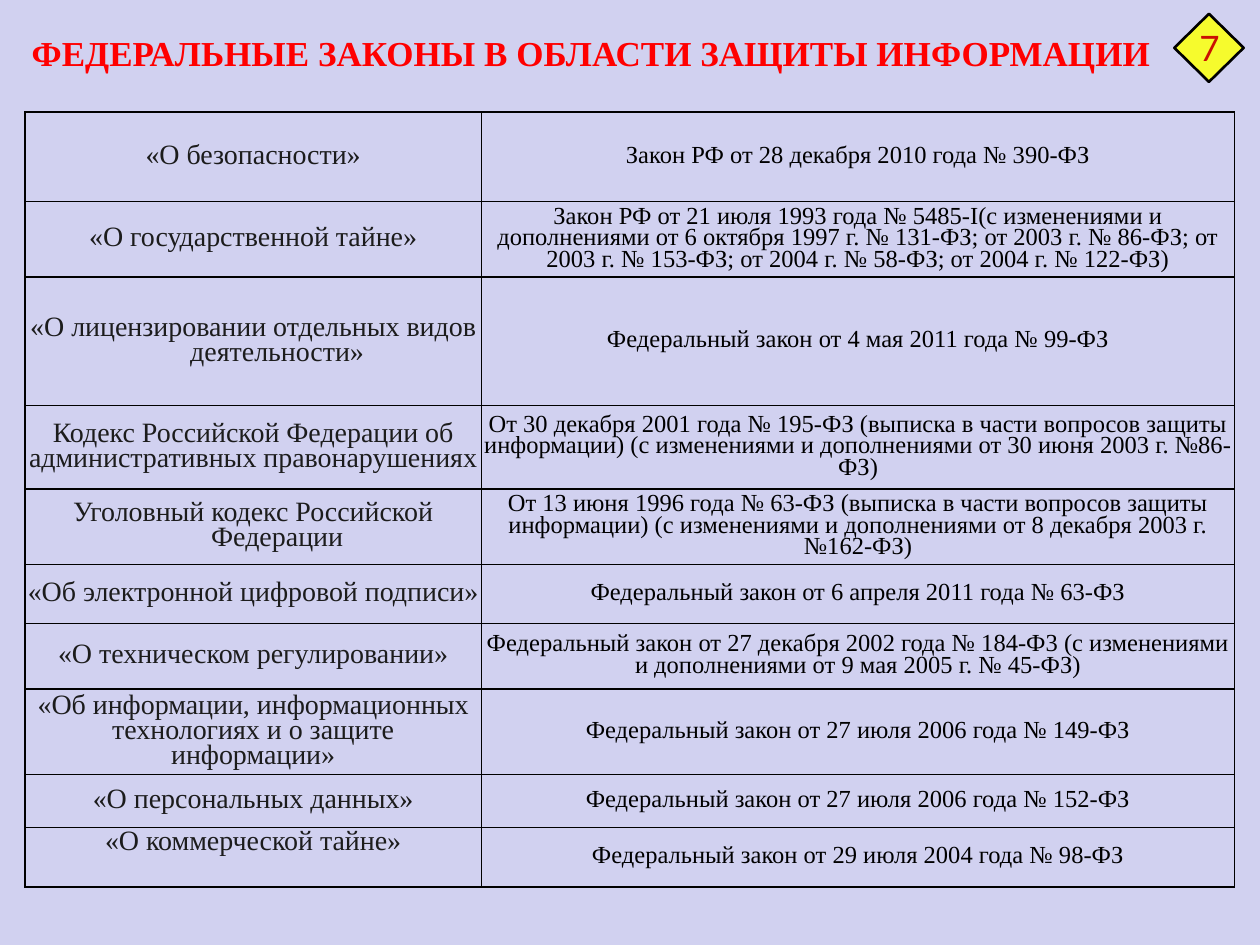
"""Build a slide that lists the federal laws on information protection."""
import dataclasses
import typing

import pptx
import pptx.dml.color
import pptx.enum.shapes
import pptx.enum.text
import pptx.oxml
import pptx.oxml.ns
import pptx.util

Inches = pptx.util.Inches
Pt = pptx.util.Pt
RGBColor = pptx.dml.color.RGBColor
ANCHOR = pptx.enum.text.MSO_ANCHOR
ALIGN = pptx.enum.text.PP_ALIGN

LAVENDER = RGBColor(0xD1, 0xD1, 0xF0)
RED = RGBColor(0xFF, 0x00, 0x00)
DARK_RED = RGBColor(0xCA, 0x10, 0x02)
YELLOW = RGBColor(0xF6, 0xFB, 0x2D)
CHARCOAL = RGBColor(0x1C, 0x1C, 0x1C)
BLACK = RGBColor(0x00, 0x00, 0x00)

SERIF = "Times New Roman"
COLUMN_WIDTHS = (3.62, 5.98)
HANGING = 0.38
CELL_MARGIN = Inches(0.02)
CELL_FORMAT = {
    "margin_left": CELL_MARGIN,
    "margin_right": CELL_MARGIN,
    "margin_top": CELL_MARGIN,
    "margin_bottom": CELL_MARGIN,
}


@dataclasses.dataclass(frozen=True)
class Law:
    """One table row: the law's name and its details."""

    height: float
    name: str
    details: str
    name_hangs: bool = True
    details_hang: bool = False
    name_anchor: typing.Any = ANCHOR.MIDDLE


LAWS = (
    Law(0.71, "«О безопасности»", "Закон РФ от 28 декабря 2010 года № 390-ФЗ"),
    Law(
        0.6,
        "«О государственной тайне»",
        "Закон РФ от 21 июля 1993 года № 5485-I(с изменениями и дополнениями "
        "от 6 октября 1997 г. № 131-ФЗ; от 2003 г. № 86-ФЗ; от 2003 г. "
        "№ 153-ФЗ; от 2004 г. № 58-ФЗ; от 2004 г. № 122-ФЗ)",
    ),
    Law(
        1.02,
        "«О лицензировании отдельных видов деятельности»",
        "Федеральный закон от 4 мая 2011 года № 99-ФЗ",
        details_hang=True,
    ),
    Law(
        0.66,
        "Кодекс Российской Федерации об административных правонарушениях",
        "От 30 декабря 2001 года № 195-ФЗ (выписка в части вопросов защиты "
        "информации) (с изменениями и дополнениями от 30 июня 2003 г. №86-ФЗ)",
        name_hangs=False,
    ),
    Law(
        0.6,
        "Уголовный кодекс Российской Федерации",
        "От 13 июня 1996 года № 63-ФЗ (выписка в части вопросов защиты "
        "информации) (с изменениями и дополнениями от 8 декабря 2003 г. №162-ФЗ)",
    ),
    Law(
        0.47,
        "«Об электронной цифровой подписи»",
        "Федеральный закон от 6 апреля 2011 года № 63-ФЗ",
        details_hang=True,
    ),
    Law(
        0.52,
        "«О техническом регулировании»",
        "Федеральный закон от 27 декабря 2002 года № 184-Ф3 (с изменениями "
        "и дополнениями от 9 мая 2005 г. № 45-ФЗ)",
    ),
    Law(
        0.68,
        "«Об информации, информационных технологиях и о защите информации»",
        "Федеральный закон от 27 июля 2006 года № 149-ФЗ",
        name_hangs=False,
        details_hang=True,
    ),
    Law(
        0.42,
        "«О персональных данных»",
        "Федеральный закон от 27 июля 2006 года № 152-ФЗ",
        details_hang=True,
    ),
    Law(
        0.47,
        "«О коммерческой тайне»",
        "Федеральный закон от 29 июля 2004 года № 98-ФЗ",
        details_hang=True,
        name_anchor=ANCHOR.TOP,
    ),
)


def apply_format(target: typing.Any, values: dict[str, typing.Any]) -> None:
    """Set every attribute named in the format values."""
    for name, value in values.items():
        setattr(target, name, value)


def write_text(
    para: typing.Any, text: str, size: int, color: RGBColor, font: str = SERIF, bold: bool = False
) -> None:
    """Add one formatted run to a paragraph."""
    span = para.add_run()
    span.text = text
    apply_format(span.font, {"size": Pt(size), "name": font, "bold": bold})
    span.font.color.rgb = color


def add_borders(cell: typing.Any) -> None:
    """Give a cell a thin black line on each side."""
    properties = cell._tc.get_or_add_tcPr()
    for side in ("lnL", "lnR", "lnT", "lnB"):
        properties.append(
            pptx.oxml.parse_xml(
                f'<a:{side} {pptx.oxml.ns.nsdecls("a")} w="{Pt(1)}"><a:solidFill>'
                f'<a:srgbClr val="{BLACK}"/></a:solidFill></a:{side}>'
            )
        )


def fill_cell(
    cell: typing.Any, text: str, size: int, color: RGBColor, hangs: bool, anchor: typing.Any
) -> None:
    """Write and format one table cell."""
    add_borders(cell)
    cell.fill.background()
    apply_format(cell, CELL_FORMAT | {"vertical_anchor": anchor})
    para = cell.text_frame.paragraphs[0]
    apply_format(para, {"alignment": ALIGN.CENTER, "line_spacing": 0.8})
    if hangs:
        properties = para._p.get_or_add_pPr()
        properties.set("marL", str(Inches(HANGING)))
        properties.set("indent", str(-Inches(HANGING)))
    write_text(para, text, size, color)


def add_law_table(page: typing.Any) -> None:
    """Add the table of laws."""
    total_height = sum(law.height for law in LAWS)
    table = page.shapes.add_table(
        len(LAWS), len(COLUMN_WIDTHS), Inches(0.2), Inches(0.89),
        Inches(sum(COLUMN_WIDTHS)), Inches(total_height),
    ).table
    apply_format(table, {"first_row": False, "horz_banding": False})
    for column, width in zip(table.columns, COLUMN_WIDTHS):
        column.width = Inches(width)
    for row, law in zip(table.rows, LAWS):
        row.height = Inches(law.height)
        fill_cell(row.cells[0], law.name, 16, CHARCOAL, law.name_hangs, law.name_anchor)
        fill_cell(row.cells[1], law.details, 14, BLACK, law.details_hang, ANCHOR.MIDDLE)


def add_title(page: typing.Any, text: str) -> None:
    """Move and format the title placeholder."""
    title = page.shapes.title
    place = {"left": 0.08, "top": 0.16, "width": 9.22, "height": 0.47}
    apply_format(title, {name: Inches(value) for name, value in place.items()})
    apply_format(title.text_frame, {"vertical_anchor": ANCHOR.BOTTOM, "word_wrap": True})
    para = title.text_frame.paragraphs[0]
    para.alignment = ALIGN.CENTER
    write_text(para, text, 20, RED, bold=True)


def add_number_badge(page: typing.Any, number: str) -> None:
    """Add the slide number on a yellow diamond."""
    badge = page.shapes.add_group_shape()
    diamond = badge.shapes.add_shape(
        pptx.enum.shapes.MSO_SHAPE.DIAMOND, Inches(9.32), Inches(0.11), Inches(0.55), Inches(0.54)
    )
    diamond.shadow.inherit = False
    diamond.fill.solid()
    diamond.fill.fore_color.rgb = YELLOW
    diamond.line.color.rgb = BLACK
    diamond.line.width = Pt(1.5)
    box = badge.shapes.add_textbox(Inches(9.42), Inches(0.16), Inches(0.28), Inches(0.43))
    write_text(box.text_frame.paragraphs[0], number, 20, DARK_RED, font="Lato")


def main() -> None:
    """Build and save the deck."""
    deck = pptx.Presentation()
    apply_format(deck, {"slide_width": Inches(10), "slide_height": Inches(7.5)})
    page = deck.slides.add_slide(deck.slide_layouts[5])
    page.background.fill.solid()
    page.background.fill.fore_color.rgb = LAVENDER
    add_title(page, "ФЕДЕРАЛЬНЫЕ ЗАКОНЫ В ОБЛАСТИ ЗАЩИТЫ ИНФОРМАЦИИ")
    add_number_badge(page, "7")
    add_law_table(page)
    deck.save("out.pptx")


if __name__ == "__main__":
    main()
